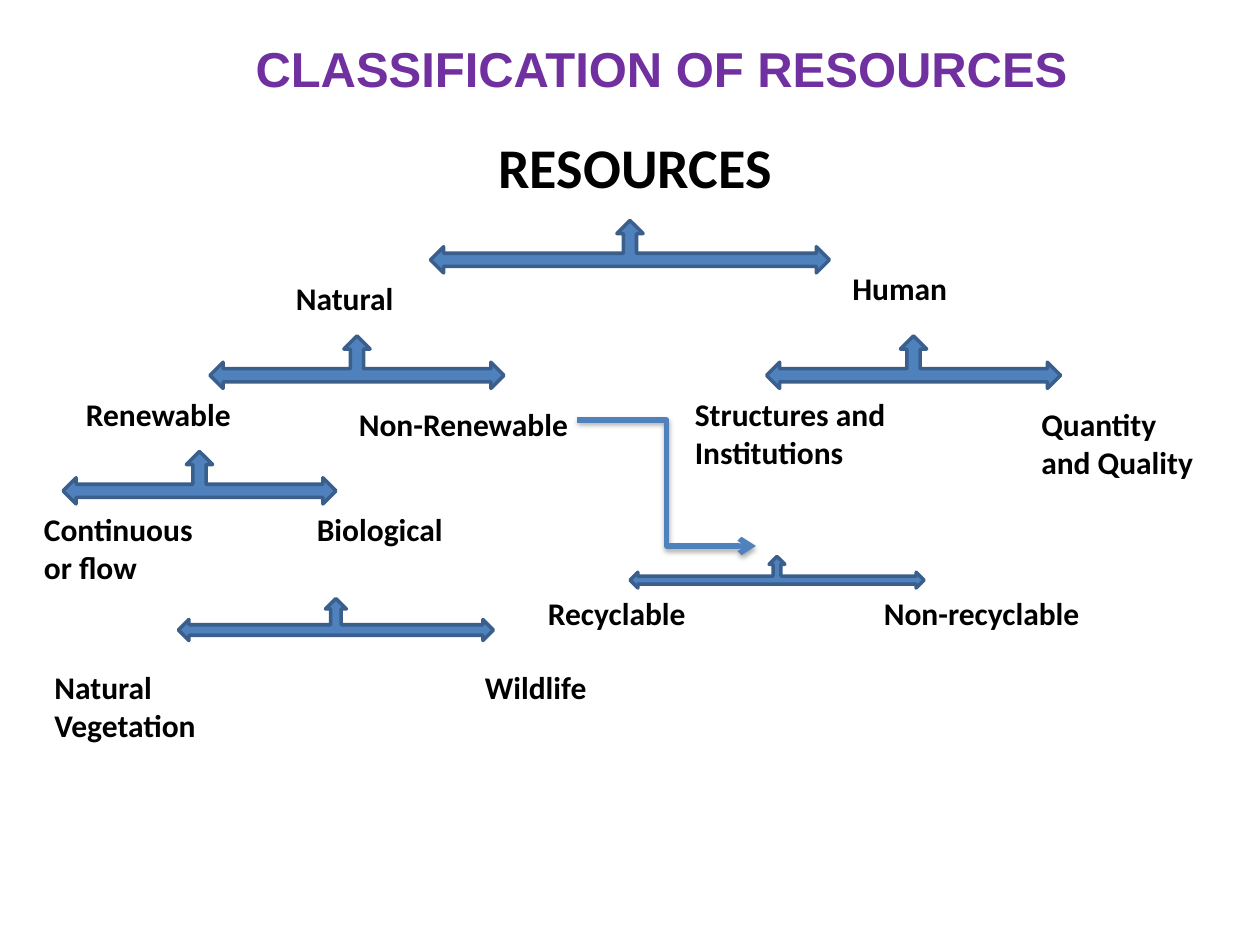
from lxml import etree
from pptx import Presentation
from pptx import util as u
from pptx.dml.color import RGBColor
from pptx.enum import shapes, text
from pptx.oxml import parse_xml
from pptx.oxml.ns import nsdecls, qn

COLUMNS = 120  # the grid has square cells: 120 columns by 90 rows
CELL = u.Inches(10) // COLUMNS

BLUE, DARK_BLUE, PURPLE, BLACK = "4F81BD", "3A5F8C", "7030A0", "000000"

# Label, then left, top, width and height in cells
LABELS = [
    ("Natural", 27, 26, 13, 4.8),
    ("Human", 80, 25, 13, 5),
    ("Renewable", 7, 37, 18, 4.8),
    ("Non-Renewable", 33, 38, 24, 4.8),
    ("Structures and Institutions", 65, 37, 23, 8.5),
    ("Quantity and Quality", 98, 38, 18, 8.5),
    ("Continuous or flow", 3, 48, 17, 8.5),
    ("Biological", 29, 48, 16, 4.8),
    ("Natural Vegetation", 4, 63, 16, 8.5),
    ("Wildlife", 45, 63, 13, 4.8),
    ("Recyclable", 51, 56, 16, 4.8),
    ("Non-recyclable", 83, 56, 23, 4.8),
]

# Left, top, width and height in cells
BRANCHES = [
    (41, 21, 38, 5),
    (20, 32, 28, 5),
    (73, 32, 28, 5),
    (6, 43, 26, 5),
    (60, 53, 28, 3),
    (17, 57, 30, 4),
]


def cells(*counts):
    return [u.Emu(round(count * CELL)) for count in counts]


def color(value):
    return RGBColor.from_string(value)


def write(frame, words, size=18, font="Calibri", fill=BLACK,
          align=text.PP_ALIGN.LEFT, anchor=text.MSO_ANCHOR.TOP):
    frame.word_wrap = True
    frame.vertical_anchor = anchor
    para = frame.paragraphs[0]
    para.alignment = align
    span = para.add_run()
    span.text = words
    span.font.name = font
    span.font.size = u.Pt(size)
    span.font.bold = True
    span.font.color.rgb = color(fill)


def add_title(slide, words):
    title = slide.shapes.title
    title.left, title.top, title.width, title.height = cells(12, 2, 102, 9)
    write(title.text_frame, words, size=28, font="Arial", fill=PURPLE,
          align=text.PP_ALIGN.CENTER, anchor=text.MSO_ANCHOR.MIDDLE)


def add_label(slide, words, *place, **style):
    box = slide.shapes.add_textbox(*cells(*place))
    write(box.text_frame, words, **style)


def add_branch(slide, *place):
    """Add the three-headed arrow that splits a class in two."""
    arrow = slide.shapes.add_shape(
        shapes.MSO_SHAPE.LEFT_RIGHT_UP_ARROW, *cells(*place))
    arrow.shadow.inherit = False
    arrow.fill.solid()
    arrow.fill.fore_color.rgb = color(BLUE)
    arrow.line.color.rgb = color(DARK_BLUE)
    arrow.line.width = u.Pt(2)


def add_elbow_arrow(slide, *ends):
    link = slide.shapes.add_connector(
        shapes.MSO_CONNECTOR.ELBOW, *cells(*ends))
    link.line.color.rgb = color(BLUE)
    link.line.width = u.Pt(3)
    etree.SubElement(link.line._get_or_add_ln(), qn("a:tailEnd"), type="arrow")
    link._element.spPr.append(parse_xml(
        f'<a:effectLst {nsdecls("a")}>'
        '<a:outerShdw blurRad="40000" dist="23000" dir="5400000" rotWithShape="0">'
        f'<a:srgbClr val="{BLACK}"><a:alpha val="35000"/></a:srgbClr>'
        '</a:outerShdw></a:effectLst>'))


def main():
    deck = Presentation()
    deck.slide_width, deck.slide_height = cells(COLUMNS, 90)
    slide = deck.slides.add_slide(deck.slide_layouts[5])

    add_title(slide, "CLASSIFICATION OF RESOURCES")
    add_label(slide, "RESOURCES", 4, 12, 113, 8, size=32,
              align=text.PP_ALIGN.CENTER)
    for place in BRANCHES:
        add_branch(slide, *place)
    for words, *place in LABELS:
        add_label(slide, words, *place)
    add_elbow_arrow(slide, 55, 40, 72, 52)

    deck.save("out.pptx")


if __name__ == "__main__":
    main()
